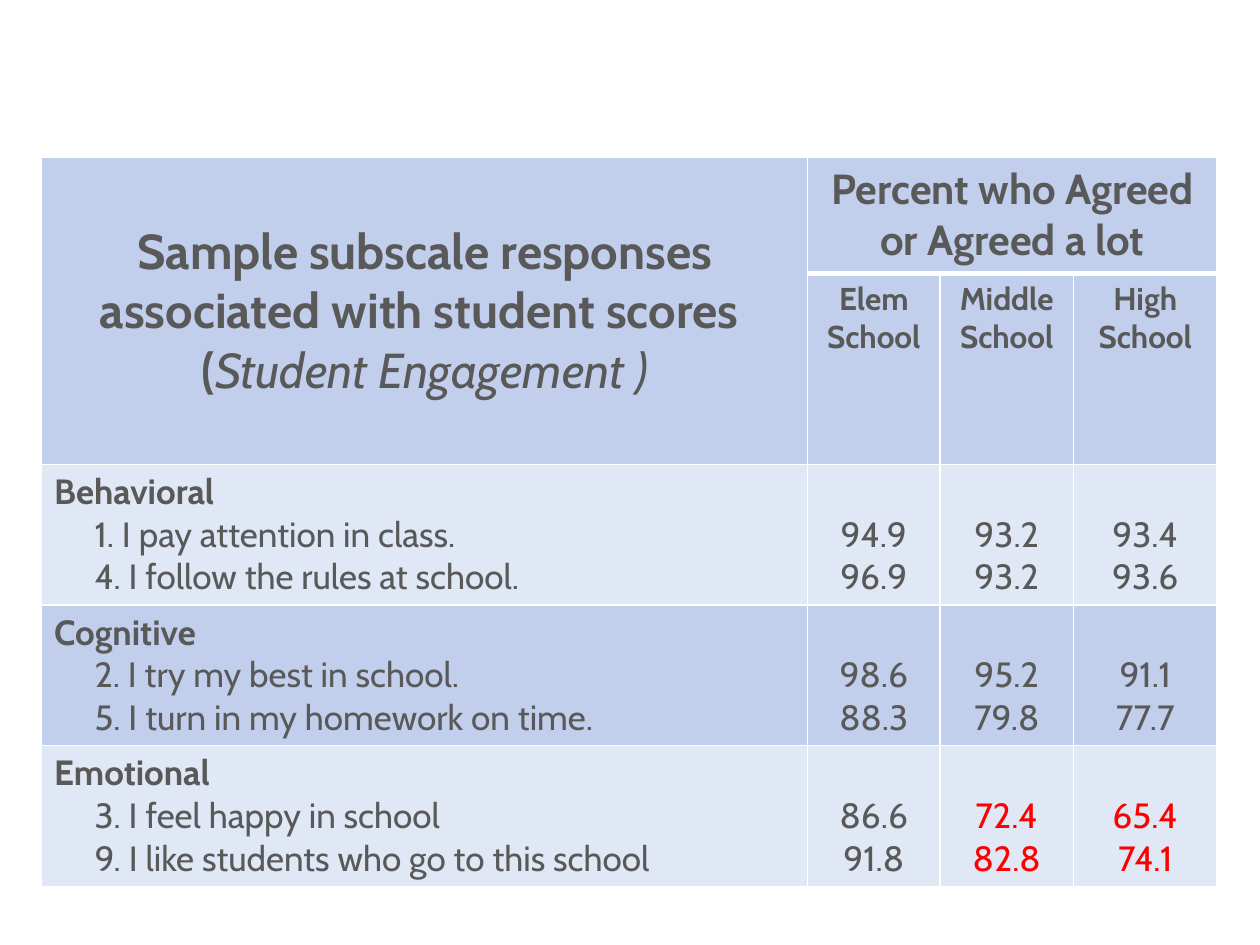
from collections import namedtuple
from dataclasses import dataclass

from lxml.etree import SubElement
from pptx import Presentation
from pptx.dml.color import RGBColor
from pptx.enum.text import MSO_ANCHOR as Anchor, PP_ALIGN as Align
from pptx.oxml.ns import qn
from pptx.util import Inches, Pt

Box = namedtuple("Box", "left top width height")


@dataclass(frozen=True)
class Theme:
    font: str = "Cabin"
    ink: str = "595959"
    alert: str = "FF0000"
    line: str = "FFFFFF"
    dark_band: str = "C1CEEC"
    light_band: str = "E0E7F5"
    title: int = 28
    heading: int = 24
    column: int = 18
    body: int = 20
    thin: int = 1
    thick: int = 3
    indent: float = 0.32


THEME = Theme()
COLUMN_WIDTHS = (6.08, 1.05, 1.06, 1.14)
ROW_HEIGHTS = (0.92, 0.61, 0.61, 0.61, 0.61)
SCHOOLS = (("Elem", "School"), ("Middle School",), ("High School",))

# Subscale, its questions, and the percentages for each school level
SUBSCALES = (
    ("Behavioral",
     ("1. I pay attention in class.", "4. I follow the rules at school."),
     (("94.9", "96.9"), ("93.2", "93.2"), ("93.4", "93.6"))),
    ("Cognitive",
     ("2. I try my best in school.", "5. I turn in my homework on time."),
     (("98.6", "88.3"), ("95.2", "79.8"), ("91.1", "77.7"))),
    ("Emotional",
     ("3. I feel happy in school", "9. I like students who go to this school"),
     (("86.6", "91.8"), ("72.4", "82.8"), ("65.4", "74.1"))),
)
ALERTS = {("Emotional", 1), ("Emotional", 2)}


def add_text(para, text, size=THEME.body, color=THEME.ink, bold=False,
             italic=False, align=None, indent=0):
    """Add a formatted span to a paragraph."""
    span = para.add_run()
    span.text = text
    font = span.font
    font.name, font.size = THEME.font, Pt(size)
    font.bold, font.italic = bold, italic
    font.color.rgb = RGBColor.from_string(color)
    if align is not None:
        para.alignment = align
    if indent:
        para._p.get_or_add_pPr().set("marL", str(Inches(indent)))


def add_lines(cell, lines, **style):
    """Write one paragraph per line, starting in the cell's empty paragraph."""
    frame = cell.text_frame
    for line in lines:
        first = not frame.paragraphs[0].runs
        para = frame.paragraphs[0] if first else frame.add_paragraph()
        add_text(para, line, **style)


def style_cell(cell, fill, top=THEME.thin, bottom=THEME.thin):
    """Give a cell its borders and then its fill."""
    props = cell._tc.get_or_add_tcPr()
    widths = {"L": THEME.thin, "R": THEME.thin, "T": top, "B": bottom}
    for side, width in widths.items():
        line = SubElement(props, qn(f"a:ln{side}"), w=str(Pt(width)))
        solid = SubElement(line, qn("a:solidFill"))
        SubElement(solid, qn("a:srgbClr"), val=THEME.line)
    cell.fill.solid()
    cell.fill.fore_color.rgb = RGBColor.from_string(fill)


def fill_header(table):
    # Merged title cell and merged heading over the school columns
    title, heading = table.cell(0, 0), table.cell(0, 1)
    title.merge(table.cell(1, 0))
    heading.merge(table.cell(0, 3))
    title.vertical_anchor = Anchor.MIDDLE
    para = title.text_frame.paragraphs[0]
    add_text(para, "Sample subscale responses associated with student scores ",
             size=THEME.title, bold=True, align=Align.CENTER)
    para.add_line_break()
    add_text(para, "(", size=THEME.title, bold=True)
    add_text(para, "Student Engagement )", size=THEME.title, italic=True)
    add_lines(heading, ["Percent who Agreed or Agreed a lot"],
              size=THEME.heading, bold=True, align=Align.CENTER)

    # School names
    for column, lines in enumerate(SCHOOLS, start=1):
        add_lines(table.cell(1, column), lines, size=THEME.column, bold=True,
                  align=Align.CENTER)


def fill_subscale(table, row, name, questions, scores):
    label = table.cell(row, 0)
    add_lines(label, [name], bold=True)
    add_lines(label, questions, indent=THEME.indent)
    # Bottom anchoring lines the scores up with their questions
    for level, values in enumerate(scores):
        cell = table.cell(row, level + 1)
        cell.vertical_anchor = Anchor.BOTTOM
        color = THEME.alert if (name, level) in ALERTS else THEME.ink
        add_lines(cell, values, color=color, align=Align.CENTER)


def add_response_table(page, box):
    frame = page.shapes.add_table(len(ROW_HEIGHTS), len(COLUMN_WIDTHS), *box)
    table = frame.table
    table.first_row = table.horz_banding = False
    for column, share in zip(table.columns, COLUMN_WIDTHS):
        column.width = round(box.width * share / sum(COLUMN_WIDTHS))
    for row, height in zip(table.rows, ROW_HEIGHTS):
        row.height = Inches(height)
    frame.height = box.height

    # Bands, with a thick rule under the heading
    for index, row in enumerate(table.rows):
        light = index in (2, 4)
        for column, cell in enumerate(row.cells):
            style_cell(cell, THEME.light_band if light else THEME.dark_band,
                       top=THEME.thick if index == 1 and column else THEME.thin,
                       bottom=THEME.thick if index == 0 and column else THEME.thin)

    fill_header(table)
    for row, subscale in enumerate(SUBSCALES, start=2):
        fill_subscale(table, row, *subscale)


def main():
    deck = Presentation()
    deck.slide_width, deck.slide_height = Inches(10), Inches(7.5)
    page = deck.slides.add_slide(deck.slide_layouts[6])
    add_response_table(page, Box(Inches(0.33), Inches(1.25),
                                 Inches(9.33), Inches(4.92)))
    deck.save("out.pptx")


if __name__ == "__main__":
    main()
